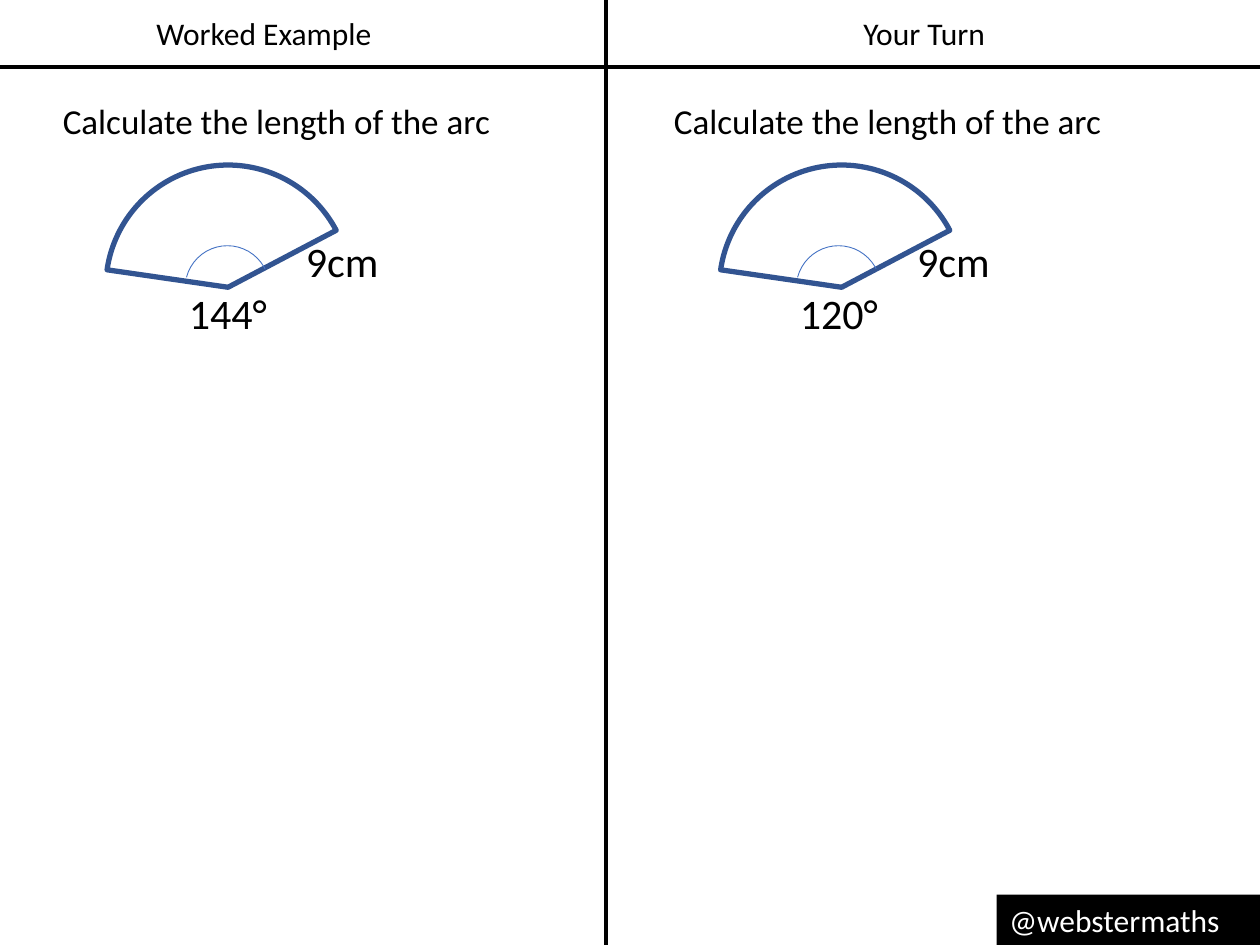
import pptx
import pptx.util
import pptx.dml.color
import pptx.enum.shapes
import pptx.enum.text
import pptx.oxml
from pptx.util import Inches, Pt

COLORS = {"ink": "000000", "paper": "FFFFFF", "sector": "325491", "angle": "4472C4"}
FONT = "Calibri"
SHAPES = pptx.enum.shapes.MSO_SHAPE
ALIGN = pptx.enum.text.PP_ALIGN


def rgb(name):
    return pptx.dml.color.RGBColor.from_string(COLORS[name])


def write(sp, text, size, color="ink", align=ALIGN.LEFT, wrap=True):
    tf = sp.text_frame
    tf.word_wrap = wrap
    tf.auto_size = pptx.enum.text.MSO_AUTO_SIZE.SHAPE_TO_FIT_TEXT
    tf.text = text
    p = tf.paragraphs[0]
    p.alignment = align
    font = p.runs[0].font
    font.name, font.size, font.color.rgb = FONT, Pt(size), rgb(color)


def add_text(slide, box, text, size, **style):
    write(slide.shapes.add_textbox(*map(Inches, box)), text, size, **style)


def add_rule(slide, x1, y1, x2, y2):
    line = slide.shapes.add_connector(
        pptx.enum.shapes.MSO_CONNECTOR.STRAIGHT, *map(Inches, (x1, y1, x2, y2)))
    line.line.color.rgb = rgb("ink")
    line.line.width = Pt(2.5)
    properties = line._element.spPr
    properties.append(pptx.oxml.parse_xml(
        '<a:effectLst xmlns:a="http://schemas.openxmlformats.org/drawingml/2006/main"/>'))


def add_curve(slide, kind, x, y, size, rotation, angles, color, width):
    """Add an unfilled pie or arc in a square box."""
    sp = slide.shapes.add_shape(kind, *map(Inches, (x, y, size, size)))
    sp.shadow.inherit = False
    sp.fill.background()
    sp.line.color.rgb = rgb(color)
    sp.line.width = Pt(width)
    sp.rotation = rotation
    sp.adjustments[0], sp.adjustments[1] = angles


def add_panel(slide, x, title, title_x, sector_x, angle, radius):
    add_text(slide, (title_x, 0.06, 1.93, 0.4), title, 18, align=ALIGN.CENTER)
    add_text(slide, (x + 0.4, 0.74, 3.66, 0.44), "Calculate the length of the arc", 20)
    add_curve(slide, SHAPES.PIE, sector_x, 1.31, 1.94, 20.7,
              (100.5, 186.92), "sector", 3)
    add_curve(slide, SHAPES.ARC, x + 1.47, 1.95, 0.67, 300,
              (152.73, 19.97), "angle", 0.5)
    add_text(slide, (x + 1.4, 2.23, 0.83, 0.5), angle, 24, wrap=False)
    add_text(slide, (x + 2.33, 1.82, 0.78, 0.5), radius, 24, wrap=False)


def add_handle(slide, box, text):
    sp = slide.shapes.add_shape(SHAPES.RECTANGLE, *map(Inches, box))
    sp.shadow.inherit = False
    sp.fill.solid()
    sp.fill.fore_color.rgb = rgb("ink")
    sp.line.fill.background()
    write(sp, text, 18, color="paper")


def main():
    prs = pptx.Presentation()
    prs.slide_width, prs.slide_height = Inches(10), Inches(7.5)
    slide = prs.slides.add_slide(prs.slide_layouts[6])
    add_rule(slide, 4.81, 0, 4.81, 7.5)
    add_rule(slide, 0, 0.53, 10, 0.53)
    add_panel(slide, 0, "Worked Example", 1.13, 0.84, "144°", "9cm")
    add_panel(slide, 4.85, "Your Turn", 6.37, 5.71, "120°", "9cm")
    add_handle(slide, (7.91, 7.1, 2.09, 0.4), "@webstermaths")
    prs.save("out.pptx")


if __name__ == "__main__":
    main()
